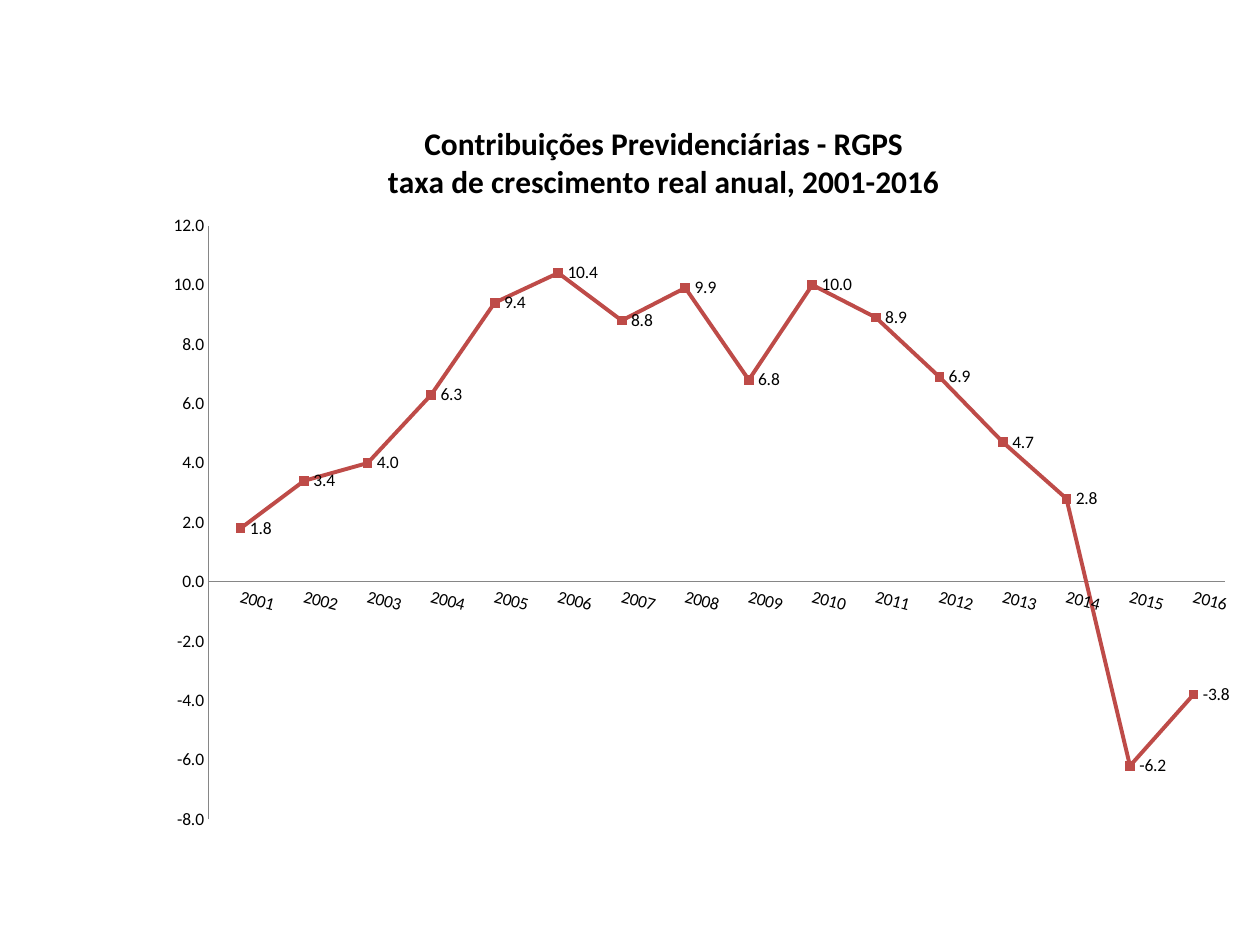
import dataclasses

import lxml.etree
import pptx
import pptx.chart.data
import pptx.dml.color
import pptx.enum.chart
import pptx.enum.text
import pptx.oxml.ns
import pptx.util

Inches = pptx.util.Inches
Pt = pptx.util.Pt


@dataclasses.dataclass(frozen=True)
class Theme:
    font: str = "Calibri"
    text: str = "000000"
    axis: str = "868686"
    line: str = "BE4B48"
    title_size: int = 18
    label_size: int = 10


THEME = Theme()
FIRST_YEAR = 2001
GROWTH_RATES = [1.8, 3.4, 4.0, 6.3, 9.4, 10.4, 8.8, 9.9,
                6.8, 10.0, 8.9, 6.9, 4.7, 2.8, -6.2, -3.8]
TITLE_LINES = ["Contribuições Previdenciárias - RGPS",
               "taxa de crescimento real anual, 2001-2016"]


def rgb(color):
    return pptx.dml.color.RGBColor.from_string(color)


def format_font(font, size=THEME.label_size, color=THEME.text, bold=False):
    font.name = THEME.font
    font.size = Pt(size)
    font.bold = bold
    font.color.rgb = rgb(color)


def write_text(text_frame, text, align=pptx.enum.text.PP_ALIGN.CENTER, **font_format):
    for index, line in enumerate(text.split("\n")):
        paragraph = text_frame.paragraphs[0] if index == 0 else text_frame.add_paragraph()
        paragraph.alignment = align
        run = paragraph.add_run()
        run.text = line
        format_font(run.font, **font_format)


def add_layout(parent, position, **settings):
    tag = pptx.oxml.ns.qn
    for old_layout in parent.findall(tag("c:layout")):
        parent.remove(old_layout)
    layout = lxml.etree.Element(tag("c:layout"))
    manual = lxml.etree.SubElement(layout, tag("c:manualLayout"))
    for name, value in {**settings, "xMode": "edge", "yMode": "edge", **position}.items():
        lxml.etree.SubElement(manual, tag(f"c:{name}")).set("val", str(value))
    text = parent.find(tag("c:tx"))
    parent.insert(0 if text is None else parent.index(text) + 1, layout)


def add_growth_chart(slide):
    data = pptx.chart.data.CategoryChartData(number_format="0.0")
    data.categories = [str(FIRST_YEAR + offset) for offset in range(len(GROWTH_RATES))]
    data.add_series("Series 1", GROWTH_RATES)
    chart = slide.shapes.add_chart(
        pptx.enum.chart.XL_CHART_TYPE.LINE_MARKERS_STACKED,
        Inches(0.7), Inches(0.7), Inches(9.06), Inches(6.09), data).chart
    chart.has_legend = False
    format_font(chart.font)
    return chart


def format_title(chart):
    chart.has_title = True
    title = chart.chart_title
    write_text(title.text_frame, "\n".join(TITLE_LINES), size=THEME.title_size, bold=True)
    title.include_in_layout = False
    add_layout(title._element, {"x": 0.26, "y": 0.04})


def format_axis(axis):
    axis.has_major_gridlines = False
    axis.major_tick_mark = pptx.enum.chart.XL_TICK_MARK.NONE
    axis.minor_tick_mark = pptx.enum.chart.XL_TICK_MARK.NONE
    axis.format.line.color.rgb = rgb(THEME.axis)
    axis.format.line.width = Pt(0.75)
    format_font(axis.tick_labels.font)


def format_axes(chart):
    format_axis(chart.category_axis)
    format_axis(chart.value_axis)
    chart.category_axis._element.txPr.bodyPr.set("rot", str(15 * 60000))
    value_axis = chart.value_axis
    value_axis.minimum_scale = -8
    value_axis.maximum_scale = 12
    value_axis.major_unit = 2
    value_axis.tick_labels.number_format = "0.0"
    value_axis.tick_labels.number_format_is_linked = False


def format_series(plot):
    plot.vary_by_categories = False
    series = plot.series[0]
    series.smooth = False
    series.format.line.color.rgb = rgb(THEME.line)
    series.format.line.width = Pt(2.25)
    marker = series.marker
    marker.style = pptx.enum.chart.XL_MARKER_STYLE.SQUARE
    marker.size = 5
    marker.format.fill.solid()
    marker.format.fill.fore_color.rgb = rgb(THEME.line)
    marker.format.line.color.rgb = rgb(THEME.line)
    labels = series.data_labels
    labels.show_value = True
    labels.number_format = "0.0"
    labels.number_format_is_linked = False
    labels.position = pptx.enum.chart.XL_LABEL_POSITION.RIGHT
    format_font(labels.font)


def main():
    presentation = pptx.Presentation()
    presentation.slide_width = Inches(10)
    presentation.slide_height = Inches(7.5)
    slide = presentation.slides.add_slide(presentation.slide_layouts[6])
    chart = add_growth_chart(slide)
    format_title(chart)
    format_axes(chart)
    format_series(chart.plots[0])
    add_layout(chart._chartSpace.chart.plotArea,
               {"x": 0.106, "y": 0.179, "w": 0.893, "h": 0.774}, layoutTarget="inner")
    presentation.save("out.pptx")


if __name__ == "__main__":
    main()
